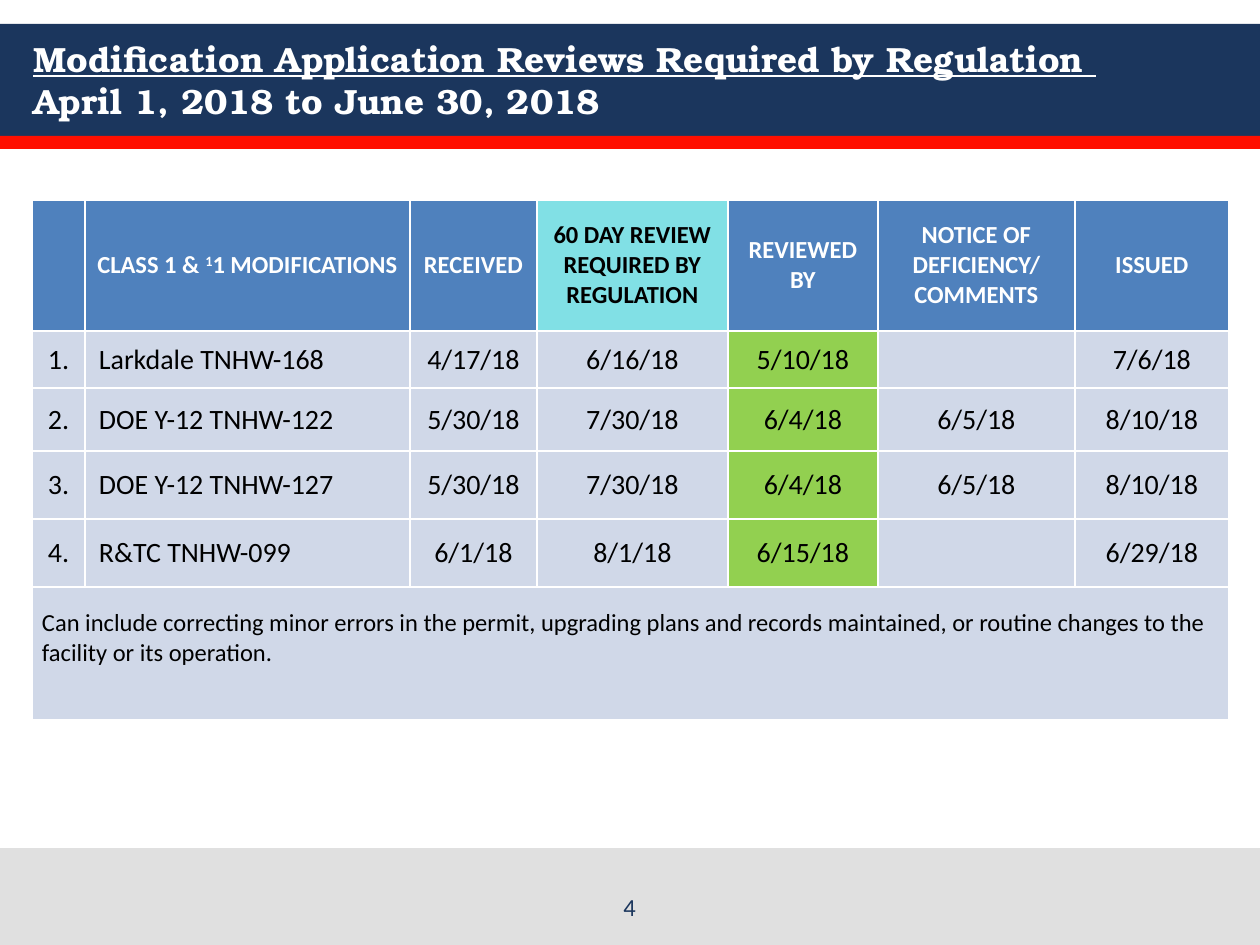
from lxml.etree import SubElement
from pptx import Presentation
from pptx.dml.color import RGBColor
from pptx.enum.shapes import MSO_SHAPE
from pptx.enum.text import MSO_ANCHOR, PP_ALIGN
from pptx.oxml.ns import qn
from pptx.util import Emu, Pt

NAVY = RGBColor(0x1B, 0x36, 0x5D)
RED = RGBColor(0xFF, 0x0F, 0x00)
GRAY = RGBColor(0xE0, 0xE0, 0xE0)
WHITE = RGBColor(0xFF, 0xFF, 0xFF)
BLACK = RGBColor(0x00, 0x00, 0x00)
BLUE = RGBColor(0x4F, 0x81, 0xBD)
CYAN = RGBColor(0x81, 0xE0, 0xE5)
GREEN = RGBColor(0x92, 0xD0, 0x50)
PALE = RGBColor(0xD0, 0xD8, 0xE8)

BODY_FONT = "Calibri"
TITLE_FONT = "TeX Gyre Bonum"

COLUMNS = [53, 325, 127, 191, 150, 197, 154]
ROWS = [132, 57, 63, 68, 68, 133]
NAME_COLUMN, DEADLINE_COLUMN, REVIEWED_COLUMN = 1, 3, 4
HEADINGS = [
    [],
    [["CLASS 1 & ", "^1", "1 MODIFICATIONS"]],
    [["RECEIVED"]],
    [["60 DAY REVIEW"], ["REQUIRED BY"], ["REGULATION"]],
    [["REVIEWED BY"]],
    [["NOTICE OF DEFICIENCY/ COMMENTS"]],
    [["ISSUED"]],
]
REVIEWS = [
    ["1.", "Larkdale TNHW-168", "4/17/18", "6/16/18", "5/10/18", "", "7/6/18"],
    ["2.", "DOE Y-12 TNHW-122", "5/30/18", "7/30/18", "6/4/18", "6/5/18", "8/10/18"],
    ["3.", "DOE Y-12 TNHW-127", "5/30/18", "7/30/18", "6/4/18", "6/5/18", "8/10/18"],
    ["4.", "R&TC TNHW-099", "6/1/18", "8/1/18", "6/15/18", "", "6/29/18"],
]
NOTE = (
    "Can include correcting minor errors in the permit, upgrading plans and records "
    "maintained, or routine changes to the facility or its operation."
)


def px(count):
    """Turn whole pixels into EMU at 126 pixels to the inch."""
    return Emu(round(count * 914400 / 126))


def add_span(para, text, size, color, bold=False, font=BODY_FONT):
    """Add one formatted run; a leading caret makes it superscript."""
    span = para.add_run()
    span.text = text.removeprefix("^")
    span.font.name = font
    span.font.size = Pt(size)
    span.font.bold = bold
    span.font.color.rgb = color
    if text.startswith("^"):
        span.font._element.set("baseline", "30000")
    return span


def add_band(page, left, top, width, height, color):
    """Draw a plain filled rectangle."""
    band = page.shapes.add_shape(
        MSO_SHAPE.RECTANGLE, px(left), px(top), px(width), px(height)
    )
    band.shadow.inherit = False
    band.fill.solid()
    band.fill.fore_color.rgb = color
    band.line.fill.background()


def add_text_box(page, left, top, width, height, anchor):
    """Add a wrapping text box and return its first paragraph."""
    box = page.shapes.add_textbox(px(left), px(top), px(width), px(height))
    box.text_frame.word_wrap = True
    box.text_frame.vertical_anchor = anchor
    return box.text_frame.paragraphs[0]


def add_header(page, left, top, width, height):
    """Draw the title bar with its red rule and two-line title."""
    rule = 13
    bar = height - rule
    add_band(page, left, top, width, bar, NAVY)
    add_band(page, left, top + bar, width, rule, RED)
    para = add_text_box(page, left + 21, top, width - 42, bar, MSO_ANCHOR.MIDDLE)
    heading = "Modification Application Reviews Required by Regulation "
    add_span(para, heading, 20, WHITE, True, TITLE_FONT).font.underline = True
    para.add_line_break()
    add_span(para, "April 1, 2018 to June 30, 2018", 20, WHITE, True, TITLE_FONT)


def add_footer(page, left, top, width, height):
    """Draw the footer band with the centred page number."""
    add_band(page, left, top, width, height, GRAY)
    number = 399
    para = add_text_box(
        page, left + (width - number) // 2, top + 30, number, 50, MSO_ANCHOR.BOTTOM
    )
    para.alignment = PP_ALIGN.CENTER
    add_span(para, "4", 14, NAVY)


def set_borders(cell, top_width):
    """Give a cell white edges, with its own width for the top edge."""
    properties = cell._tc.get_or_add_tcPr()
    for side in "LRTB":
        width = Pt(top_width if side == "T" else 1)
        edge = SubElement(properties, qn(f"a:ln{side}"), w=str(width))
        fill = SubElement(edge, qn("a:solidFill"))
        SubElement(fill, qn("a:srgbClr"), val=str(WHITE))


def fill_cell(cell, paragraphs, size, color, fill, bold=False,
              align=PP_ALIGN.CENTER, margin=10, top_width=1):
    """Format one cell and write its paragraphs of runs."""
    set_borders(cell, top_width)
    cell.fill.solid()
    cell.fill.fore_color.rgb = fill
    cell.vertical_anchor = MSO_ANCHOR.MIDDLE
    cell.margin_left = cell.margin_right = px(margin)
    cell.margin_top = cell.margin_bottom = 0
    for index, texts in enumerate(paragraphs):
        frame = cell.text_frame
        para = frame.add_paragraph() if index else frame.paragraphs[0]
        para.alignment = align
        for text in texts:
            add_span(para, text, size, color, bold)


def add_review_table(page, left, top):
    """Build the table of modification reviews with its closing note."""
    table = page.shapes.add_table(
        len(ROWS), len(COLUMNS), px(left), px(top), px(sum(COLUMNS)), px(sum(ROWS))
    ).table
    for column, width in zip(table.columns, COLUMNS):
        column.width = px(width)
    for row, height in zip(table.rows, ROWS):
        row.height = px(height)

    for index, heading in enumerate(HEADINGS):
        deadline = index == DEADLINE_COLUMN
        fill_cell(
            table.cell(0, index), heading, 14, BLACK if deadline else WHITE,
            CYAN if deadline else BLUE, bold=True, top_width=3,
        )

    for row, review in enumerate(REVIEWS, start=1):
        for index, text in enumerate(review):
            named = index == NAME_COLUMN
            fill_cell(
                table.cell(row, index), [[text]] if text else [], 16, BLACK,
                GREEN if index == REVIEWED_COLUMN else PALE,
                align=PP_ALIGN.LEFT if named else PP_ALIGN.CENTER,
                margin=14 if named else 10,
            )

    last = len(ROWS) - 1
    note = table.cell(last, 0)
    note.merge(table.cell(last, len(COLUMNS) - 1))
    fill_cell(note, [[NOTE]], 14, BLACK, PALE, align=PP_ALIGN.LEFT)
    note.margin_bottom = px(30)


def main():
    """Build the slide and save the deck."""
    deck = Presentation()
    deck.slide_width, deck.slide_height = px(1260), px(945)
    page = deck.slides.add_slide(deck.slide_layouts[6])
    add_header(page, 0, 24, 1260, 125)
    add_footer(page, 0, 848, 1260, 97)
    add_review_table(page, 32, 199)
    deck.save("out.pptx")


if __name__ == "__main__":
    main()
